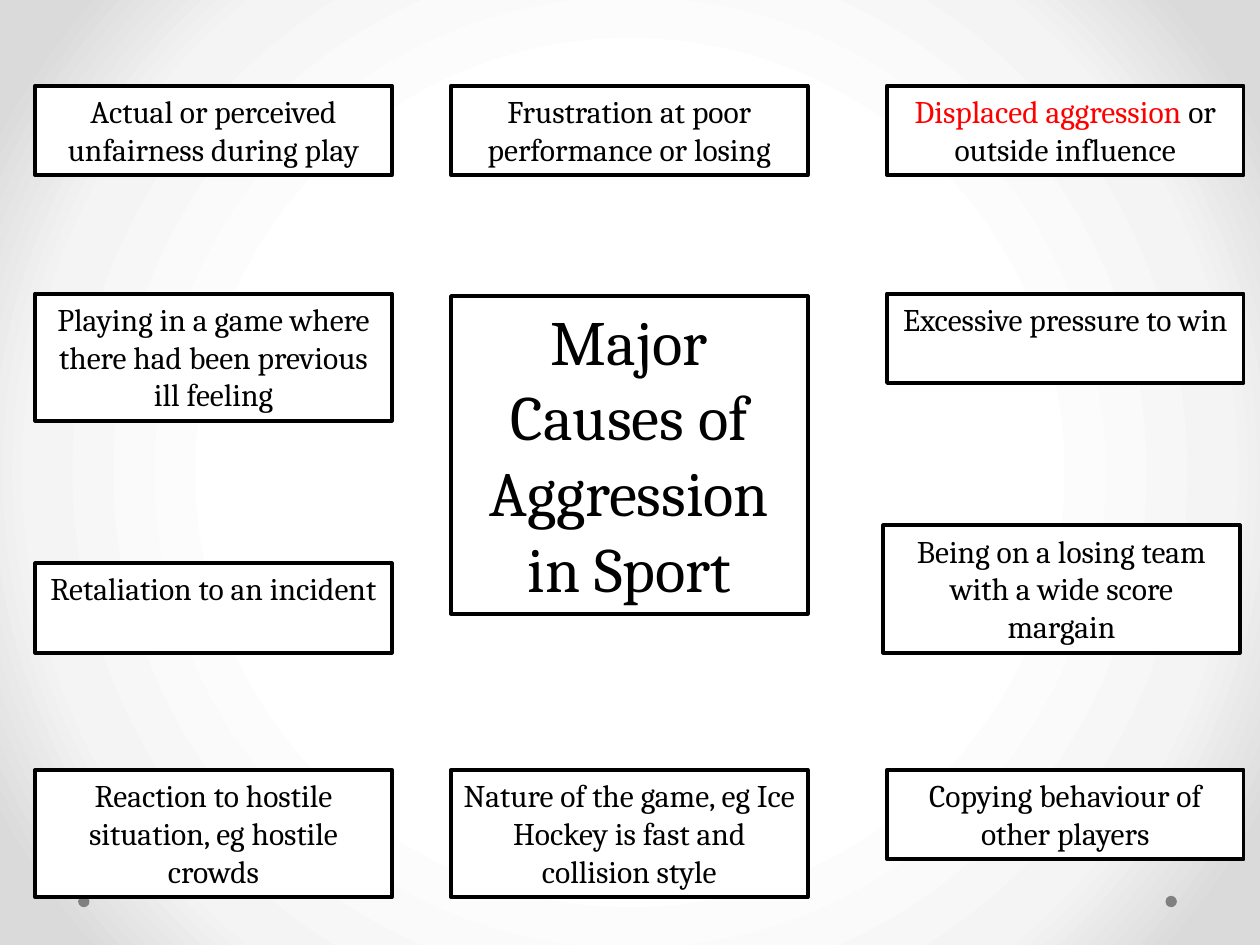
from dataclasses import dataclass

from pptx import Presentation
from pptx.dml.color import RGBColor
from pptx.enum.shapes import MSO_SHAPE
from pptx.enum.text import MSO_ANCHOR, MSO_AUTO_SIZE, PP_ALIGN
from pptx.oxml import parse_xml
from pptx.oxml.ns import nsdecls
from pptx.slide import Slide
from pptx.util import Inches, Pt

OVAL = MSO_SHAPE.OVAL
CENTER = PP_ALIGN.CENTER

INK = {
    "text": "000000",
    "key": "FF0000",
    "box": "FFFFFF",
    "dot": "808080",
    "mid": "FFFFFF",
    "rim": "F4F4F4",
    "edge": "DADADA",
}
STOPS = {"mid": 50, "rim": 76, "edge": 92}
FRAME = {
    "word_wrap": True,
    "auto_size": MSO_AUTO_SIZE.NONE,
    "vertical_anchor": MSO_ANCHOR.TOP,
}
FONT = "Cambria"
WIDTH = 2.83
LOW, TALL = 0.71, 1.01
LEFT, MID, RIGHT = 0.28, 3.58, 7.04
TOP, UPPER, LAST = 0.68, 2.33, 6.11
BASE = 5.18


@dataclass
class Box:
    x: float
    y: float
    text: str
    high: float = LOW
    size: int = 18
    key: str = ""


BOXES = [
    Box(MID, 2.35, "Major Causes of Aggression in Sport", 2.52, 36),
    Box(LEFT, TOP, "Actual or perceived unfairness during play"),
    Box(MID, TOP, "Frustration at poor performance or losing"),
    Box(RIGHT, TOP, "or outside influence", key="Displaced aggression "),
    Box(RIGHT, UPPER, "Excessive pressure to win"),
    Box(LEFT, UPPER, "Playing in a game where there had been previous ill feeling", TALL),
    Box(LEFT, BASE - LOW, "Retaliation to an incident"),
    Box(7.01, BASE - TALL, "Being on a losing team with a wide score margain", TALL),
    Box(LEFT, LAST, "Reaction to hostile situation, eg hostile crowds", TALL),
    Box(MID, LAST, "Nature of the game, eg Ice Hockey is fast and collision style", TALL),
    Box(RIGHT, LAST, "Copying behaviour of other players"),
]


def tint(name: str) -> RGBColor:
    return RGBColor.from_string(INK[name])


def draw_ground(slide: Slide) -> None:
    stops = "".join(
        f'<a:gs pos="{pos * 1000}"><a:srgbClr val="{INK[name]}"/></a:gs>'
        for name, pos in STOPS.items()
    )
    ground = parse_xml(
        f'<p:bg {nsdecls("p", "a")}><p:bgPr><a:gradFill rotWithShape="1">'
        f'<a:gsLst>{stops}</a:gsLst><a:path path="circle">'
        '<a:fillToRect l="50000" t="50000" r="50000" b="50000"/></a:path>'
        "</a:gradFill><a:effectLst/></p:bgPr></p:bg>"
    )
    slide.element.cSld.insert(0, ground)


def draw_dot(slide: Slide, x: float) -> None:
    dot = slide.shapes.add_shape(OVAL, Inches(x), Inches(7.11), Inches(0.09), Inches(0.09))
    dot.shadow.inherit = False
    dot.fill.solid()
    dot.fill.fore_color.rgb = tint("dot")
    dot.line.fill.background()


def draw_box(slide: Slide, box: Box) -> None:
    shape = slide.shapes.add_textbox(
        Inches(box.x), Inches(box.y), Inches(WIDTH), Inches(box.high)
    )
    shape.fill.solid()
    shape.fill.fore_color.rgb = tint("box")
    shape.line.color.rgb = tint("text")
    shape.line.width = Pt(2.25)
    frame = shape.text_frame
    for name, value in FRAME.items():
        setattr(frame, name, value)
    para = frame.paragraphs[0]
    para.alignment = CENTER
    for text, shade in ((box.key, "key"), (box.text, "text")):
        if text:
            run = para.add_run()
            run.text = text
            for name, value in {"name": FONT, "size": Pt(box.size)}.items():
                setattr(run.font, name, value)
            run.font.color.rgb = tint(shade)


def main() -> None:
    deck = Presentation()
    deck.slide_width, deck.slide_height = Inches(10), Inches(7.5)
    slide = deck.slides.add_slide(deck.slide_layouts[6])
    draw_ground(slide)
    for x in (9.25, 0.62):
        draw_dot(slide, x)
    for box in BOXES:
        draw_box(slide, box)
    deck.save("out.pptx")


if __name__ == "__main__":
    main()
